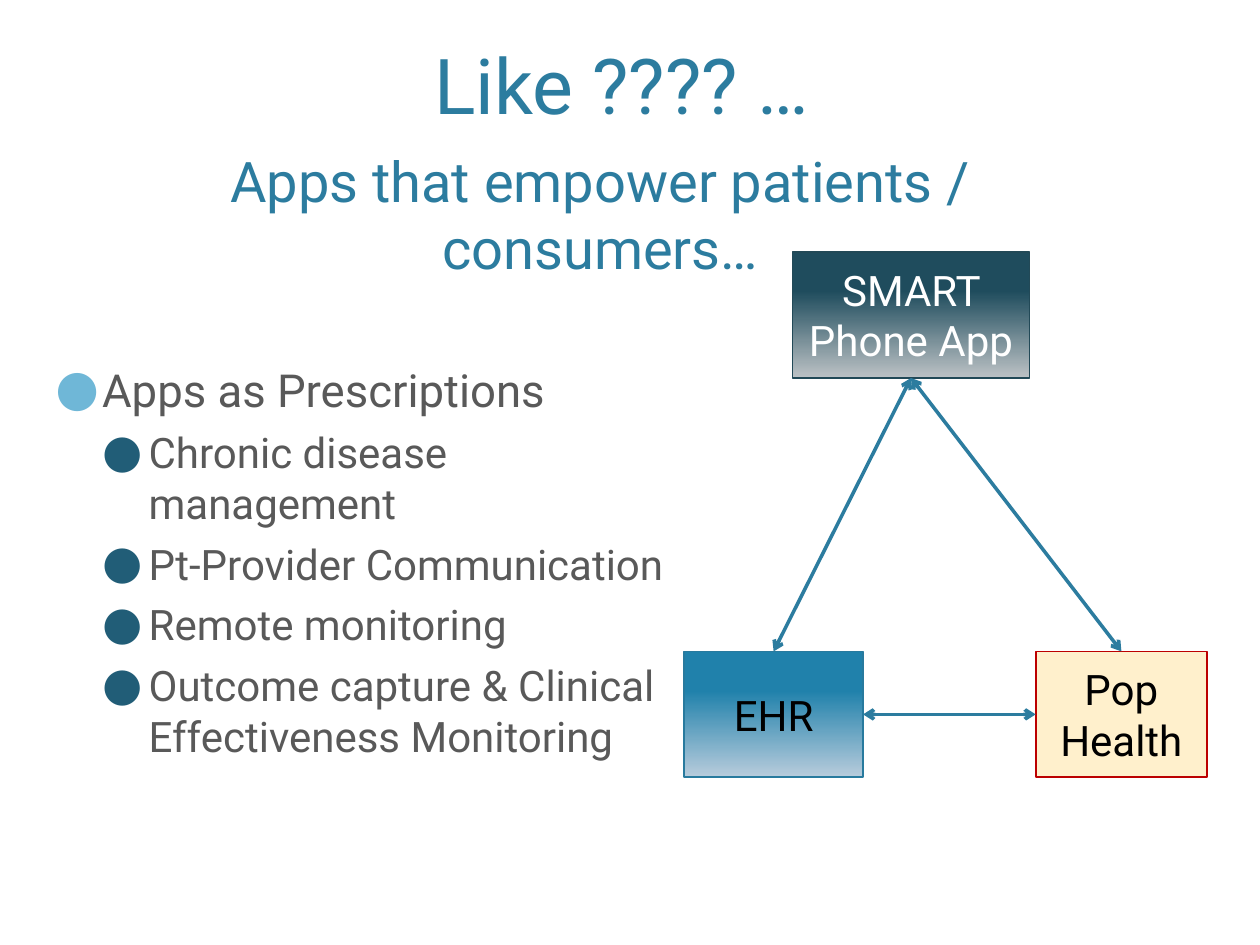
from dataclasses import dataclass

from lxml import etree
from pptx import Presentation
from pptx.dml.color import RGBColor
from pptx.enum.shapes import MSO_CONNECTOR, MSO_SHAPE
from pptx.enum.text import MSO_ANCHOR, MSO_AUTO_SIZE, PP_ALIGN
from pptx.oxml.ns import qn
from pptx.util import Emu, Pt

CENTER, LEFT = PP_ALIGN.CENTER, PP_ALIGN.LEFT
TOP, MIDDLE, BOTTOM = MSO_ANCHOR.TOP, MSO_ANCHOR.MIDDLE, MSO_ANCHOR.BOTTOM
NO_FIT = MSO_AUTO_SIZE.NONE
RECTANGLE, STRAIGHT = MSO_SHAPE.RECTANGLE, MSO_CONNECTOR.STRAIGHT
TOP_SITE, LEFT_SITE, BOTTOM_SITE, RIGHT_SITE = range(4)
EMU_PER_PX = 9144  # 100 px to the inch
TITLE_AND_CONTENT = 1


@dataclass(frozen=True)
class Theme:
    font: str = "Roboto"
    accent: str = "2C7C9F"
    body: str = "595959"
    light: str = "FFFFFF"
    dark: str = "000000"
    bullets: tuple = ("6FB7D7", "215D77")
    phone_fill: tuple = ("1F4C5D", "BCC2C5")
    phone_line: str = "224957"
    ehr_fill: tuple = ("2081AB", "B8CCDC")
    ehr_line: str = "287A9E"
    health_fill: tuple = ("FFF0CC",)
    health_line: str = "BC0000"
    heading_size: int = 44
    title_size: int = 32
    item_sizes: tuple = (26, 24)
    node_size: int = 24


THEME = Theme()


def px(length):
    return Emu(length * EMU_PER_PX)


def rgb(code):
    return RGBColor.from_string(code)


def place(shape, box):
    shape.left, shape.top, shape.width, shape.height = map(px, box)


def prepare_frame(shape, anchor):
    frame = shape.text_frame
    frame.word_wrap = True
    frame.auto_size = NO_FIT
    frame.vertical_anchor = anchor
    return frame


def write(para, text, *, size, color, align=CENTER):
    para.alignment = align
    span = para.add_run()
    span.text = text
    span.font.name = THEME.font
    span.font.size = Pt(size)
    span.font.color.rgb = rgb(color)


def add_heading(page, box):
    heading = page.shapes.add_textbox(*map(px, box))
    frame = prepare_frame(heading, BOTTOM)
    write(frame.paragraphs[0], "Like ???? … ",
          size=THEME.heading_size, color=THEME.accent)


def fill_title(page, box):
    title = page.shapes.title
    place(title, box)
    frame = prepare_frame(title, BOTTOM)
    write(frame.paragraphs[0], "Apps that empower patients / consumers…",
          size=THEME.title_size, color=THEME.accent)


def set_bullet(para, level):
    """Give the paragraph a round bullet and the hanging indent of its level."""
    props = para._p.get_or_add_pPr()
    props.set("marL", str(px((38, 75)[level])))
    props.set("indent", str(px(-37)))
    color = etree.SubElement(props, qn("a:buClr"))
    etree.SubElement(color, qn("a:srgbClr"), val=THEME.bullets[level])
    etree.SubElement(props, qn("a:buSzPct"), val="110000")
    etree.SubElement(props, qn("a:buFont"), typeface=THEME.font)
    etree.SubElement(props, qn("a:buChar"), char="●")


def fill_list(page, box):
    body = page.placeholders[1]
    place(body, box)
    frame = prepare_frame(body, TOP)
    frame.margin_top = px(79)
    items = [
        (0, "Apps as Prescriptions"),
        (1, "Chronic disease management"),
        (1, "Pt-Provider Communication"),
        (1, "Remote monitoring"),
        (1, "Outcome capture & Clinical Effectiveness Monitoring"),
    ]
    for index, (level, text) in enumerate(items):
        para = frame.add_paragraph() if index else frame.paragraphs[0]
        para.level = level
        para.space_before = Pt(6 if index else 0)
        write(para, text, size=THEME.item_sizes[level], color=THEME.body,
              align=LEFT)
        set_bullet(para, level)


def add_node(page, box, text, *, fill, line, color):
    """Add a labelled box; two fill colours make a downward gradient."""
    node = page.shapes.add_shape(RECTANGLE, *map(px, box))
    node.shadow.inherit = False
    if len(fill) == 1:
        node.fill.solid()
        node.fill.fore_color.rgb = rgb(fill[0])
    else:
        node.fill.gradient()
        node.fill.gradient_angle = 270
        for stop, code, position in zip(node.fill.gradient_stops, fill,
                                        (0.31, 1)):
            stop.color.rgb = rgb(code)
            stop.position = position
    node.line.color.rgb = rgb(line)
    node.line.width = Pt(1)
    frame = prepare_frame(node, MIDDLE)
    write(frame.paragraphs[0], text, size=THEME.node_size, color=color)
    return node


def link(page, start, start_site, end, end_site):
    """Join two nodes with a double-headed arrow."""
    arrow = page.shapes.add_connector(STRAIGHT, 0, 0, 0, 0)
    arrow.begin_connect(start, start_site)
    arrow.end_connect(end, end_site)
    arrow.line.color.rgb = rgb(THEME.accent)
    arrow.line.width = Pt(2)
    outline = arrow.line._get_or_add_ln()
    for tip in ("a:headEnd", "a:tailEnd"):
        etree.SubElement(outline, qn(tip), type="arrow")
    etree.SubElement(arrow._element.spPr, qn("a:effectLst"))


def add_triangle(page, box):
    """Draw the three linked systems within the box."""
    left, top, width, height = box
    node_height = 100
    low = top + height - node_height
    phone = add_node(page, (left + 86, top, 188, node_height),
                     "SMART Phone App", fill=THEME.phone_fill,
                     line=THEME.phone_line, color=THEME.light)
    health = add_node(page, (left + width - 136, low, 136, node_height),
                      "Pop Health", fill=THEME.health_fill,
                      line=THEME.health_line, color=THEME.dark)
    ehr = add_node(page, (left, low, 142, node_height), "EHR",
                   fill=THEME.ehr_fill, line=THEME.ehr_line,
                   color=THEME.dark)
    link(page, phone, BOTTOM_SITE, ehr, TOP_SITE)
    link(page, phone, BOTTOM_SITE, health, TOP_SITE)
    link(page, health, LEFT_SITE, ehr, RIGHT_SITE)


def main():
    deck = Presentation()
    deck.slide_width, deck.slide_height = px(1000), px(750)
    page = deck.slides.add_slide(deck.slide_layouts[TITLE_AND_CONTENT])
    fill_title(page, (78, 140, 797, 88))
    fill_list(page, (33, 208, 533, 375))
    add_triangle(page, (543, 200, 415, 417))
    add_heading(page, (44, 33, 914, 75))
    deck.save("out.pptx")


if __name__ == "__main__":
    main()
